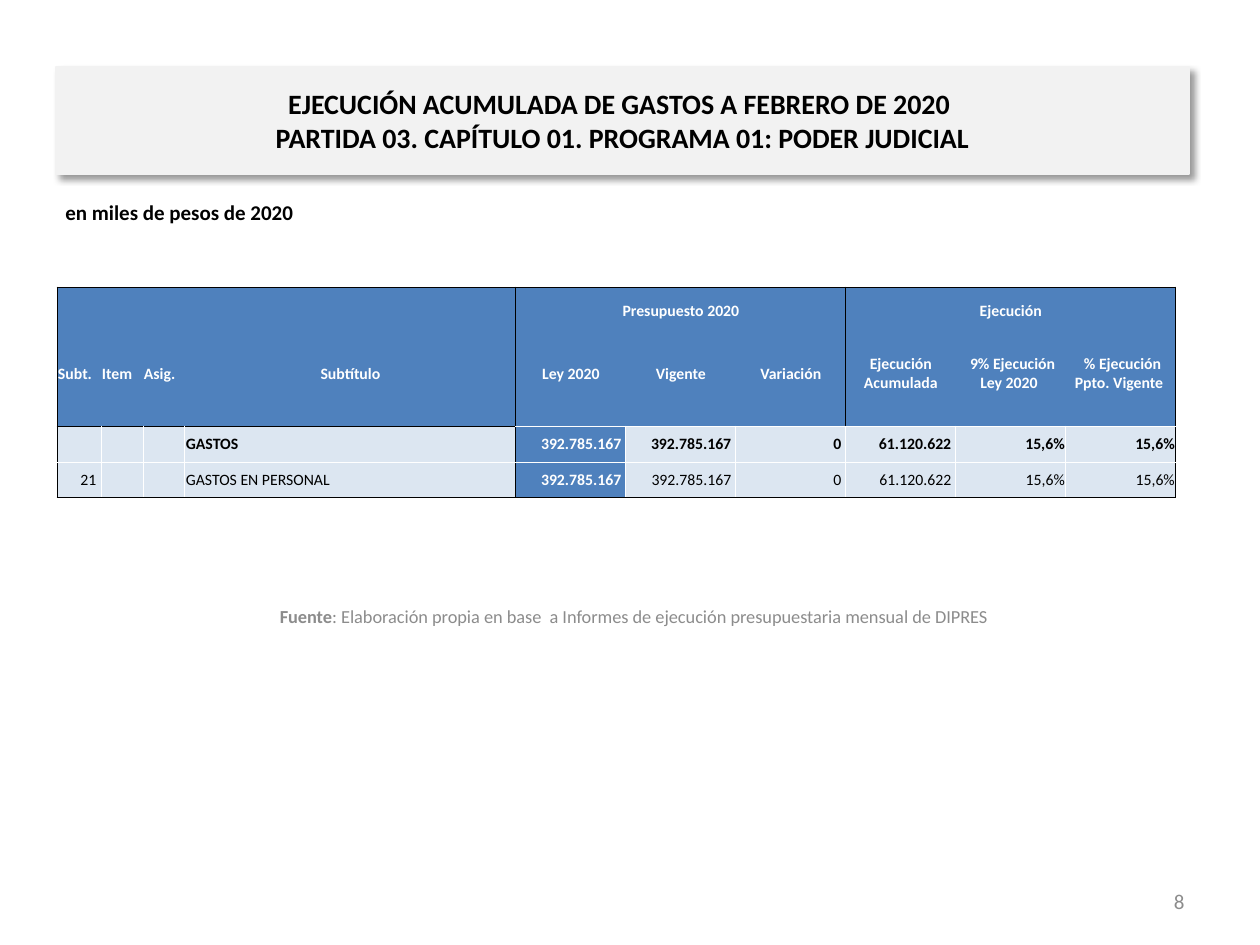
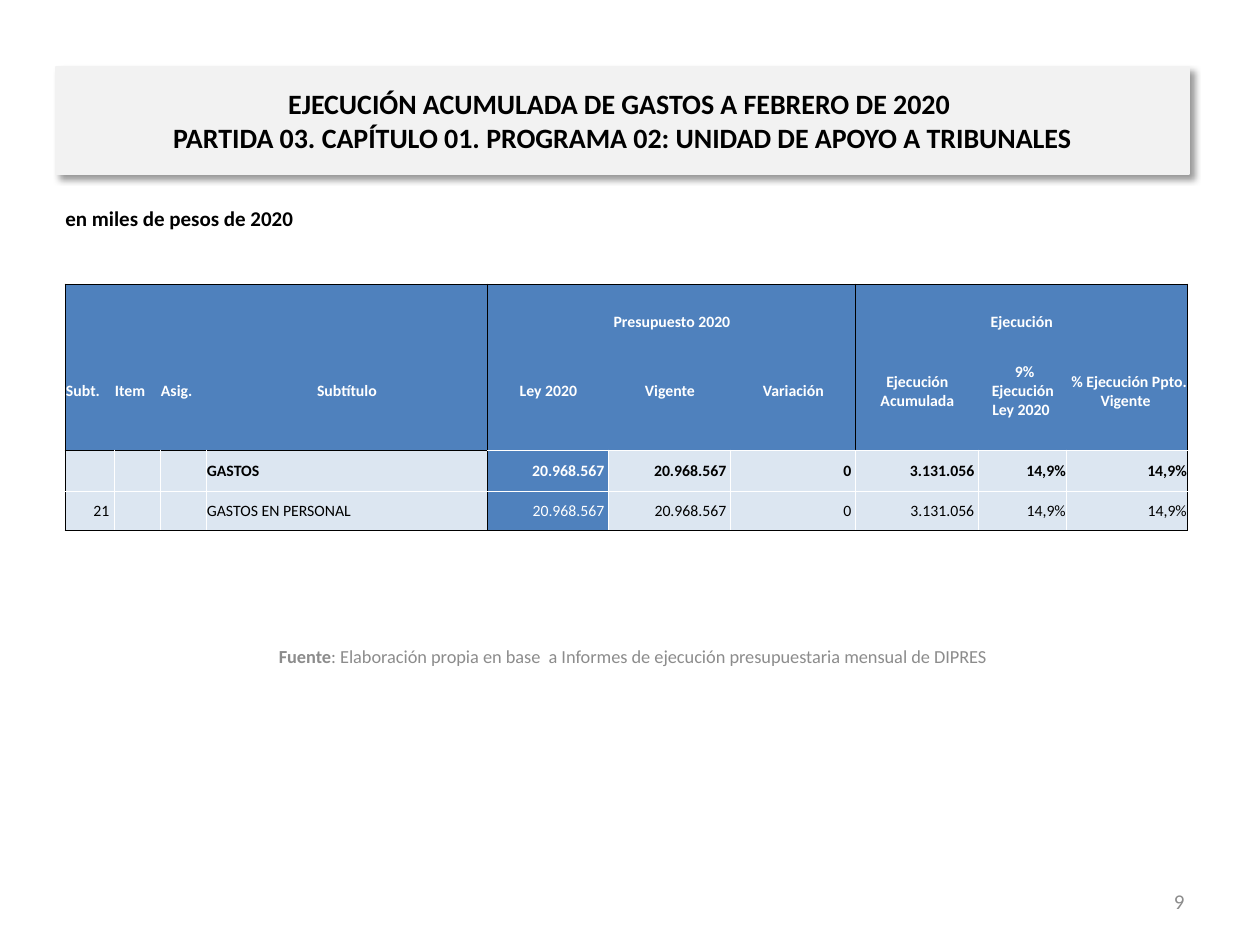
from lxml import etree
from pptx import Presentation
from pptx import util as u
from pptx.dml.color import RGBColor
from pptx.enum import text
from pptx.oxml import parse_xml
from pptx.oxml.ns import nsdecls, qn

BLUE, PALE, BAND = "4F81BD", "DCE6F1", "F2F2F2"
BLACK, WHITE, GRAY = "000000", "FFFFFF", "8C8C8C"
LEFT, CENTER, RIGHT = text.PP_ALIGN.LEFT, text.PP_ALIGN.CENTER, text.PP_ALIGN.RIGHT
MIDDLE, TOP, BOTTOM = text.MSO_ANCHOR.MIDDLE, text.MSO_ANCHOR.TOP, text.MSO_ANCHOR.BOTTOM

HEADING = "EJECUCIÓN ACUMULADA DE GASTOS A FEBRERO DE 2020 "
SOURCE = ": Elaboración propia en base  a Informes de ejecución presupuestaria mensual de DIPRES"
GROUPS = ["", "", "", "", "Presupuesto 2020", "", "", "Ejecución", "", ""]
COLUMNS = ["Subt.", "Item", "Asig.", "Subtítulo", "Ley 2020", "Vigente", "Variación",
           "Ejecución Acumulada", " 9% Ejecución Ley 2020 ", " % Ejecución Ppto. Vigente "]

PROGRAMS = [
    dict(number="8", name="PARTIDA 03. CAPÍTULO 01. PROGRAMA 01: PODER JUDICIAL",
         units_top=193, source=(55, 591), table=(57, 287),
         widths=[44, 42, 42, 331] + [110] * 6, heights=[34, 105, 36, 35],
         budget="392.785.167 ", spent="61.120.622 ", share="15,6%", bold_law=True),
    dict(number="9", name="PARTIDA 03. CAPÍTULO 01. PROGRAMA 02: UNIDAD DE APOYO A TRIBUNALES",
         units_top=199, source=(54, 631), table=(65, 284),
         widths=[49, 46, 46, 282, 121, 122, 125, 123, 88, 121], heights=[48, 118, 41, 39],
         budget="20.968.567 ", spent="3.131.056 ", share="14,9%", bold_law=False),
]


def px(count):
    return u.Inches(count / 126)


def add_run(paragraph, words, size, color, bold=False):
    run = paragraph.add_run()
    run.text = words
    run.font.name = "Calibri"
    run.font.size = u.Pt(size)
    run.font.bold = bold
    run.font.color.rgb = RGBColor.from_string(color)


presentation = Presentation()
presentation.slide_width, presentation.slide_height = px(1260), px(945)

# Shared title size
for style in presentation.slide_master.element.iter(qn("p:titleStyle")):
    for defaults in style.iter(qn("a:defRPr")):
        defaults.set("sz", "1600")

for program in PROGRAMS:
    slide = presentation.slides.add_slide(presentation.slide_layouts[5])

    # Title band with shadow
    title = slide.shapes.title
    title.left, title.top, title.width, title.height = px(56), px(67), px(1133), px(107)
    title.fill.solid()
    title.fill.fore_color.rgb = RGBColor.from_string(BAND)
    title.line.color.rgb = RGBColor.from_string(BAND)
    title.line.width = u.Pt(0.75)
    title._element.spPr.append(parse_xml(
        f'<a:effectLst {nsdecls("a")}><a:outerShdw blurRad="50800" dist="38100" dir="2700000"'
        ' algn="tl" rotWithShape="0"><a:srgbClr val="000000"><a:alpha val="40000"/>'
        '</a:srgbClr></a:outerShdw></a:effectLst>'))
    title.text_frame.auto_size = text.MSO_AUTO_SIZE.NONE
    title.text_frame.vertical_anchor = MIDDLE
    paragraph = title.text_frame.paragraphs[0]
    paragraph.alignment = CENTER
    add_run(paragraph, HEADING, 16, BLACK, True)
    paragraph.add_line_break()
    add_run(paragraph, program["name"], 16, BLACK, True)

    # Source, page number and units
    notes = [
        ((*program["source"], 1158, 50), MIDDLE, CENTER,
         [("Fuente", 10.5, GRAY, True), (SOURCE, 10.5, GRAY)]),
        ((903, 876, 294, 50), MIDDLE, RIGHT, [(program["number"], 12, GRAY)]),
        ((53, program["units_top"], 1134, 63), TOP, LEFT,
         [("en miles de pesos de 2020", 12, BLACK, True)]),
    ]
    for box, anchor, alignment, runs in notes:
        frame = slide.shapes.add_textbox(*map(px, box)).text_frame
        frame.word_wrap = True
        frame.vertical_anchor = anchor
        frame.paragraphs[0].alignment = alignment
        for run in runs:
            add_run(frame.paragraphs[0], *run)

    # Budget table
    widths, heights = program["widths"], program["heights"]
    amounts = [program["budget"], program["budget"], "0 ", program["spent"],
               program["share"], program["share"]]
    rows = [GROUPS, COLUMNS, ["", "", "", "GASTOS"] + amounts,
            ["21 ", "", "", "GASTOS EN PERSONAL"] + amounts]
    table = slide.shapes.add_table(len(rows), len(widths), *map(px, program["table"]),
                                   px(sum(widths)), px(sum(heights))).table
    table.first_row = table.horz_banding = False
    for column, width in zip(table.columns, widths):
        column.width = px(width)
    for row, height in zip(table.rows, heights):
        row.height = px(height)
    for first in (4, 7):
        table.cell(0, first).merge(table.cell(0, first + 2))

    for r, row in enumerate(rows):
        for c, words in enumerate(row):
            cell = table.cell(r, c)
            header, law = r < 2, c == 4
            cell.margin_left = cell.margin_right = cell.margin_top = px(1)
            cell.margin_bottom = 0
            cell.vertical_anchor = BOTTOM if r == 0 else MIDDLE
            cell.fill.solid()
            cell.fill.fore_color.rgb = RGBColor.from_string(BLUE if header or law else PALE)

            paragraph = cell.text_frame.paragraphs[0]
            if header:
                paragraph.alignment = LEFT if c < 3 else CENTER
            else:
                paragraph.alignment = LEFT if c == 3 else RIGHT
            if words:
                bold = r < 3 or (law and program["bold_law"])
                add_run(paragraph, words, 9, WHITE if header or law else BLACK, bold)
            else:
                etree.SubElement(paragraph._p, qn("a:endParaRPr"), sz="900")

            # Black frame and group dividers, white grid in the body, none in the header
            right = c + (cell.span_width if cell.is_merge_origin else 1)
            black = {"lnL": c in (0, 4) or (header and c == 7),
                     "lnR": right in (4, 10) or (header and right == 7),
                     "lnT": r == 0 or (r == 2 and c < 4),
                     "lnB": r == 3 or (r == 1 and c < 4)}
            white = {"lnL": not header, "lnR": not header, "lnT": r >= 2, "lnB": r >= 1}
            properties = cell._tc.get_or_add_tcPr()
            for position, side in enumerate(black):
                line = etree.Element(qn(f"a:{side}"), w="6350")
                if black[side] or white[side]:
                    solid = etree.SubElement(line, qn("a:solidFill"))
                    etree.SubElement(solid, qn("a:srgbClr"), val=BLACK if black[side] else WHITE)
                else:
                    etree.SubElement(line, qn("a:noFill"))
                properties.insert(position, line)

presentation.save("out.pptx")
